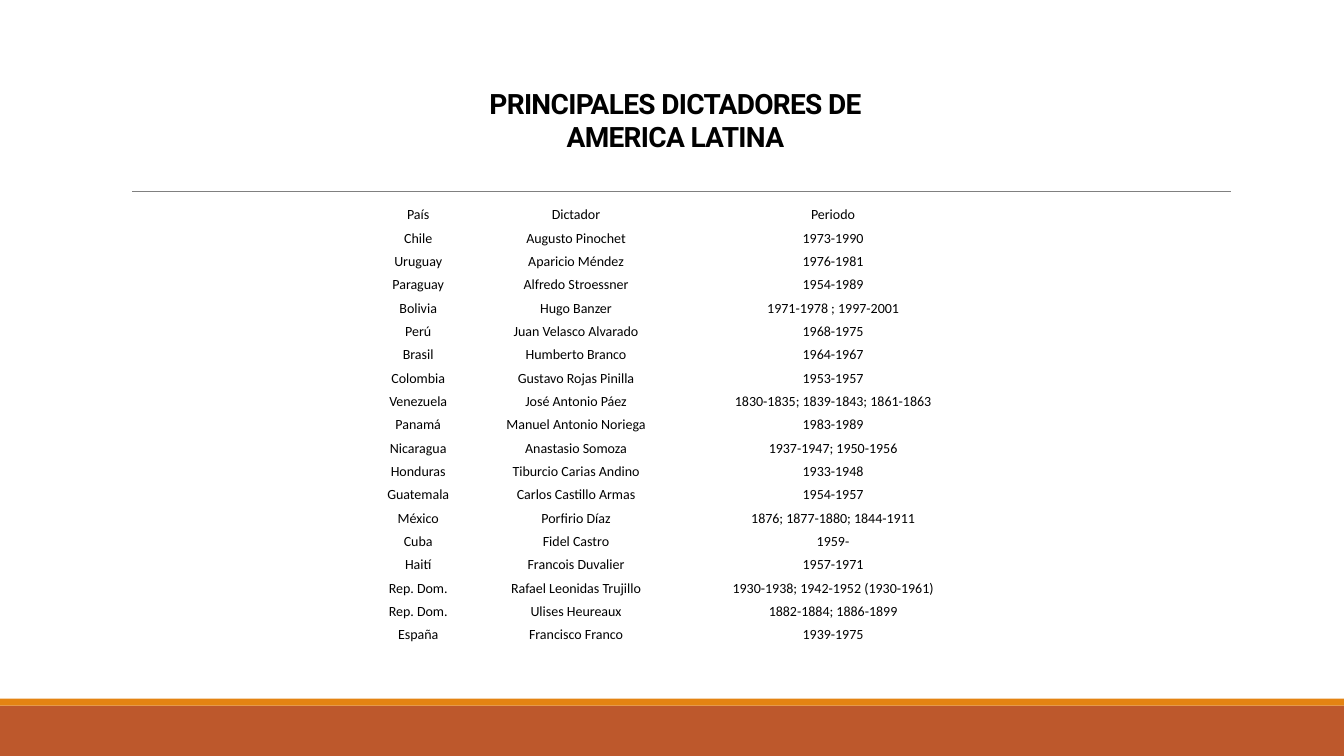
from pptx import Presentation
from pptx.dml.color import RGBColor
from pptx.enum.shapes import MSO_CONNECTOR, MSO_SHAPE
from pptx.enum.text import MSO_ANCHOR, PP_ALIGN
from pptx.oxml.ns import qn
from pptx.util import Pt
from lxml import etree

RECTANGLE = MSO_SHAPE.RECTANGLE
STRAIGHT = MSO_CONNECTOR.STRAIGHT
CENTER = PP_ALIGN.CENTER
BOTTOM, MIDDLE = MSO_ANCHOR.BOTTOM, MSO_ANCHOR.MIDDLE

PAGE_WIDTH, PAGE_HEIGHT = 960, 540
TITLE_LINES = ["PRINCIPALES DICTADORES DE", "AMERICA LATINA"]
COLUMN_WIDTHS = [75, 150.5, 216.7]
ROWS = [
    ("País", "Dictador", "Periodo"),
    ("Chile", "Augusto Pinochet", "1973-1990"),
    ("Uruguay", "Aparicio Méndez", "1976-1981"),
    ("Paraguay", "Alfredo Stroessner", "1954-1989"),
    ("Bolivia", "Hugo Banzer", "1971-1978 ; 1997-2001"),
    ("Perú", "Juan Velasco Alvarado", "1968-1975"),
    ("Brasil", "Humberto Branco", "1964-1967"),
    ("Colombia", "Gustavo Rojas Pinilla", "1953-1957"),
    ("Venezuela", "José Antonio Páez", "1830-1835; 1839-1843; 1861-1863"),
    ("Panamá", "Manuel Antonio Noriega", "1983-1989"),
    ("Nicaragua", "Anastasio Somoza", "1937-1947; 1950-1956"),
    ("Honduras", "Tiburcio Carias Andino", "1933-1948"),
    ("Guatemala", "Carlos Castillo Armas", "1954-1957"),
    ("México", "Porfirio Díaz", "1876; 1877-1880; 1844-1911"),
    ("Cuba", "Fidel Castro", "1959-"),
    ("Haití", "Francois Duvalier", "1957-1971"),
    ("Rep. Dom.", "Rafael Leonidas Trujillo", "1930-1938; 1942-1952 (1930-1961)"),
    ("Rep. Dom.", "Ulises Heureaux", "1882-1884; 1886-1899"),
    ("España", "Francisco Franco", "1939-1975"),
]


def paint(color_format, color):
    color_format.rgb = RGBColor.from_string(color)


def set_font(para, name, size, color, bold=False):
    para.alignment = CENTER
    para.font.name, para.font.size, para.font.bold = name, Pt(size), bold
    paint(para.font.color, color)


def add_band(page, left, top, width, height, color):
    band = page.shapes.add_shape(RECTANGLE, Pt(left), Pt(top), Pt(width), Pt(height))
    band.shadow.inherit = False
    band.fill.solid()
    paint(band.fill.fore_color, color)
    band.line.fill.background()


def add_footer(page, left, top, width, height):
    stripe = 5
    add_band(page, left, top + stripe, width, height - stripe, "BD582C")
    add_band(page, left, top, width, stripe, "E48312")


def add_title(page, left, top, width, height):
    box = page.shapes.add_textbox(Pt(left), Pt(top), Pt(width), Pt(height))
    frame = box.text_frame
    frame.word_wrap = True
    frame.vertical_anchor = BOTTOM
    frame.margin_bottom = Pt(27)
    para = frame.paragraphs[0]
    para.text = "\v".join(TITLE_LINES)
    para.line_spacing = Pt(24)
    set_font(para, "Roboto", 20, "000000", bold=True)
    for span in para.runs:
        span.font._element.set("spc", "-50")  # tighter letters

    # Rule under the title
    rule_y = Pt(top + height)
    rule = page.shapes.add_connector(STRAIGHT, Pt(left + 8), rule_y, Pt(left + width + 0.7), rule_y)
    rule.line.width = Pt(0.5)
    paint(rule.line.color, "808080")
    etree.SubElement(rule._element.spPr, qn("a:effectLst"))


def add_dictator_table(page, left, top, width, height):
    frame = page.shapes.add_table(len(ROWS), len(COLUMN_WIDTHS), Pt(left), Pt(top), Pt(width), Pt(height))
    table = frame.table
    table.first_row = table.horz_banding = False
    for column, column_width in zip(table.columns, COLUMN_WIDTHS):
        column.width = Pt(column_width)
    for row, texts in zip(table.rows, ROWS):
        row.height = Pt(height / len(ROWS))
        for cell, text in zip(row.cells, texts):
            cell.fill.solid()
            paint(cell.fill.fore_color, "FFFFFF")
            cell.vertical_anchor = MIDDLE
            cell.margin_left = cell.margin_right = Pt(4.3)
            cell.margin_top = cell.margin_bottom = Pt(2.1)
            cell.text = text
            set_font(cell.text_frame.paragraphs[0], "Calibri", 10, "000000")


def main():
    deck = Presentation()
    deck.slide_width, deck.slide_height = Pt(PAGE_WIDTH), Pt(PAGE_HEIGHT)
    page = deck.slides.add_slide(deck.slide_layouts[6])
    add_footer(page, 0, 499, PAGE_WIDTH, PAGE_HEIGHT - 499)
    add_title(page, 86.4, 22.2, 792, 114.4)
    add_dictator_table(page, 261.2, 145.3, sum(COLUMN_WIDTHS), 316.9)
    deck.save("out.pptx")


if __name__ == "__main__":
    main()
